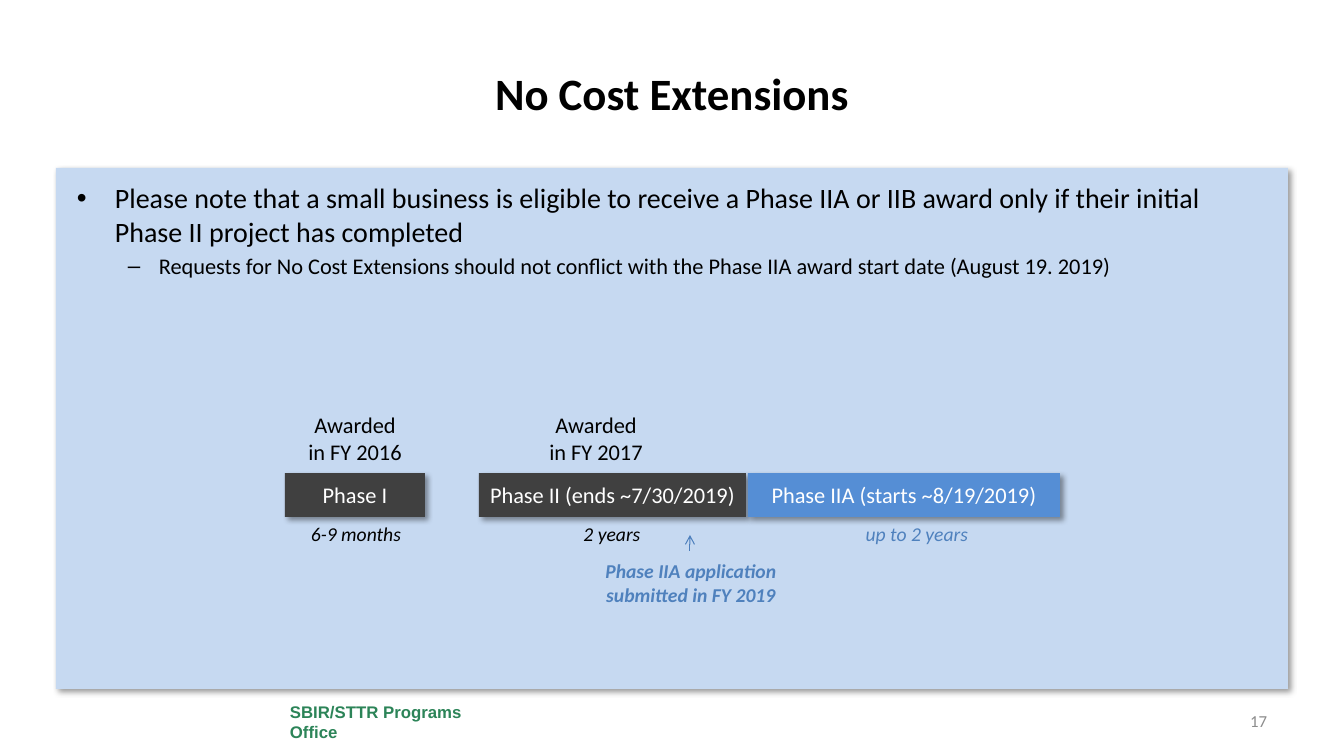
from lxml import etree
from pptx import Presentation, util as u
from pptx.dml.color import RGBColor
from pptx.enum import shapes, text
from pptx.oxml.ns import qn

# Content: boxes are (left, top, width, height) in px
TITLE = "No Cost Extensions"
POINTS = [  # text, style, bullet, indent px, hanging px, space before pt
    ("Please note that a small business is eligible to receive a Phase IIA or IIB award "
     "only if their initial Phase II project has completed", "point", "•", 38, 38, 0),
    ("Requests for No Cost Extensions should not conflict with the Phase IIA award "
     "start date (August 19. 2019)", "subpoint", "–", 82, 31, 3),
]
PHASES = [  # name, bar left, bar width, bar fill, duration, its left, its style, award, its left
    ("Phase I", 285, 140, "dark", "6-9 months", 290, "duration", "Awarded in FY 2016", 296),
    ("Phase II (ends ~7/30/2019)", 479, 267, "dark", "2 years", 546, "duration",
     "Awarded in FY 2017", 537),
    ("Phase IIA (starts ~8/19/2019)", 748, 312, "blue", "up to 2 years", 851, "next", None, None),
]
APPLICATION = "Phase IIA application submitted in FY 2019"
OFFICE = "SBIR/STTR Programs Office"
PAGE = "17"

# Theme
PX = 914400 / 100.8
BAR_TOP, BAR_HEIGHT = 473, 44
THEME = {
    "fills": {"panel": "C6D9F1", "dark": "404040", "blue": "558ED5", "white": "FFFFFF"},
    "arrow": "4B7EBC",
    "styles": {  # colour, then font values
        "title": ("000000", {"size": u.Pt(32), "bold": True}),
        "point": ("000000", {"size": u.Pt(20)}),
        "subpoint": ("000000", {"size": u.Pt(16)}),
        "bar": ("FFFFFF", {"size": u.Pt(16)}),
        "award": ("000000", {"size": u.Pt(16)}),
        "duration": ("000000", {"size": u.Pt(14), "italic": True}),
        "next": ("4F81BD", {"size": u.Pt(14), "italic": True}),
        "application": ("4F81BD", {"size": u.Pt(14), "bold": True, "italic": True}),
        "office": ("2C8458", {"size": u.Pt(12), "bold": True, "name": "Arial"}),
        "page": ("8C8C8C", {"size": u.Pt(12)}),
    },
}
LEFT, CENTER, RIGHT = text.PP_ALIGN.LEFT, text.PP_ALIGN.CENTER, text.PP_ALIGN.RIGHT
TOP, MIDDLE = text.MSO_ANCHOR.TOP, text.MSO_ANCHOR.MIDDLE


def px(*lengths):
    return [round(length * PX) for length in lengths]


def write(paragraph, words, style, align):
    paragraph.alignment = align
    run = paragraph.add_run()
    run.text = words
    color, values = THEME["styles"][style]
    for name, value in {"name": "Calibri", **values}.items():
        setattr(run.font, name, value)
    run.font.color.rgb = RGBColor.from_string(color)


def set_frame(owner, anchor, wrap=True):
    frame = owner.text_frame
    frame.word_wrap = wrap
    frame.vertical_anchor = anchor
    return frame.paragraphs[0]


def label(box, words, style, align=CENTER, anchor=TOP):
    write(set_frame(slide.shapes.add_textbox(*px(*box)), anchor), words, style, align)


def block(box, fill, shadow=True):
    shape = slide.shapes.add_shape(shapes.MSO_SHAPE.RECTANGLE, *px(*box))
    shape.fill.solid()
    shape.fill.fore_color.rgb = RGBColor.from_string(THEME["fills"][fill])
    shape.line.fill.background()
    shape.shadow.inherit = False
    if shadow:
        effects = shape._element.spPr.find(qn("a:effectLst"))
        outer = etree.SubElement(effects, qn("a:outerShdw"), blurRad="50800", dist="38100",
                                 dir="2700000", algn="tl", rotWithShape="0")
        black = etree.SubElement(outer, qn("a:srgbClr"), val="000000")
        etree.SubElement(black, qn("a:alpha"), val="40000")
    return shape


deck = Presentation()
deck.slide_width, deck.slide_height = px(1344, 756)
slide = deck.slides.add_slide(deck.slide_layouts[6])

# Panel, footer and title
block((56, 168, 1232, 521), "panel")
office = block((280, 698, 213, 48), "white", shadow=False)
write(set_frame(office, MIDDLE), OFFICE, "office", LEFT)
label((67, 30, 1210, 126), TITLE, "title", anchor=MIDDLE)

# Bulleted points
points = slide.shapes.add_textbox(*px(67, 176, 1210, 499))
paragraph = set_frame(points, TOP)
for index, (words, style, bullet, indent, hanging, before) in enumerate(POINTS):
    if index:
        paragraph = points.text_frame.add_paragraph()
    paragraph.level = index
    paragraph.space_before = u.Pt(before)
    props = paragraph._p.get_or_add_pPr()
    margin, hang = px(indent, hanging)
    props.set("marL", str(margin))
    props.set("indent", str(-hang))
    etree.SubElement(props, qn("a:buFont"), typeface="Arial")
    etree.SubElement(props, qn("a:buChar"), char=bullet)
    write(paragraph, words, style, LEFT)

label((1064, 701, 213, 40), PAGE, "page", RIGHT, MIDDLE)

# Timeline: award above, bar, duration below
for name, left, width, fill, duration, duration_left, style, award, award_left in PHASES:
    bar = block((left, BAR_TOP, width, BAR_HEIGHT), fill)
    write(set_frame(bar, MIDDLE, wrap=False), name, "bar", CENTER)
    label((duration_left, BAR_TOP + BAR_HEIGHT, 132, 34), duration, style)
    if award:
        label((award_left, BAR_TOP - 67, 118, 65), award, "award")

# Application arrow and note
arrow = slide.shapes.add_connector(shapes.MSO_CONNECTOR.STRAIGHT, *px(690, 551, 690, 535))
arrow.line.color.rgb = RGBColor.from_string(THEME["arrow"])
arrow.line.width = u.Pt(0.75)
etree.SubElement(arrow.line._get_or_add_ln(), qn("a:tailEnd"), type="arrow")
etree.SubElement(arrow._element.spPr, qn("a:effectLst"))
label((579, 554, 224, 57), APPLICATION, "application")

deck.save("out.pptx")
